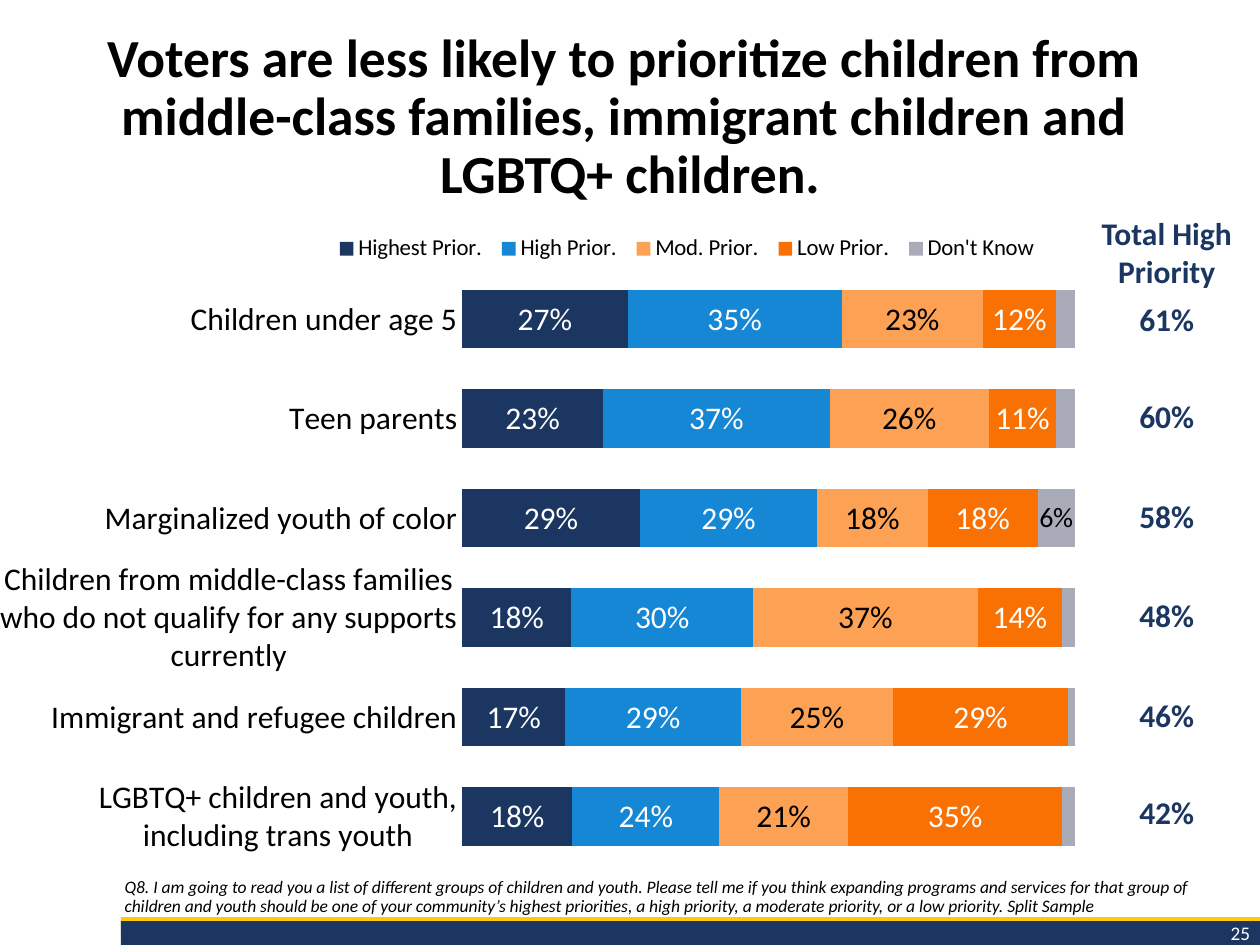
from typing import NamedTuple

from pptx import Presentation
from pptx.chart.data import CategoryChartData
from pptx.dml.color import RGBColor
from pptx.enum.chart import XL_CHART_TYPE as ChartType
from pptx.enum.chart import XL_LABEL_POSITION as LabelPosition
from pptx.enum.chart import XL_LEGEND_POSITION as LegendPosition
from pptx.enum.chart import XL_TICK_MARK as TickMark
from pptx.enum.shapes import MSO_SHAPE as ShapeType
from pptx.enum.text import MSO_ANCHOR as Anchor
from pptx.enum.text import PP_ALIGN as Align
from pptx.oxml import parse_xml
from pptx.oxml.ns import nsdecls, qn
from pptx.util import Inches, Pt

FONT = "Calibri"
BLACK = RGBColor(0x00, 0x00, 0x00)
WHITE = RGBColor(0xFF, 0xFF, 0xFF)
GOLD = RGBColor(0xFC, 0xCA, 0x09)
FOOTER_NAVY = RGBColor(0x1B, 0x36, 0x61)
NAVY = RGBColor(0x1B, 0x36, 0x60)
BLUE = RGBColor(0x15, 0x87, 0xD4)
PEACH = RGBColor(0xFD, 0xA1, 0x55)
ORANGE = RGBColor(0xF9, 0x71, 0x03)
GRAY = RGBColor(0xA9, 0xAB, 0xB8)


class Box(NamedTuple):
    left: float
    top: float
    width: float
    height: float

    def lengths(self):
        return [Inches(value) for value in self]


class Group(NamedTuple):
    name: str
    shares: tuple
    total: str
    row_height: float


class Rating(NamedTuple):
    name: str
    fill: RGBColor
    label: RGBColor


GROUPS = [
    Group("Children under age 5", (0.27, 0.35, 0.23, 0.12, 0.03), "61%", 0.39),
    Group("Teen parents", (0.23, 0.37, 0.26, 0.11, 0.03), "60%", 0.77),
    Group("Marginalized youth of color", (0.29, 0.29, 0.18, 0.18, 0.06), "58%", 0.79),
    Group("Children from middle-class families who do not qualify for any supports currently",
          (0.18, 0.30, 0.37, 0.14, 0.02), "48%", 0.79),
    Group("Immigrant and refugee children", (0.17, 0.29, 0.25, 0.29, 0.01), "46%", 0.79),
    Group("LGBTQ+ children and youth, including trans youth",
          (0.18, 0.24, 0.21, 0.35, 0.02), "42%", 0.77),
]
RATINGS = [
    Rating("Highest Prior.", NAVY, WHITE),
    Rating("High Prior.", BLUE, WHITE),
    Rating("Mod. Prior.", PEACH, BLACK),
    Rating("Low Prior.", ORANGE, WHITE),
    Rating("Don't Know", GRAY, BLACK),
]
SMALLEST_LABEL = 0.05
TITLE = ("Voters are less likely to prioritize children from \v"
         "middle-class families, immigrant children and \vLGBTQ+ children.")
QUESTION = ("Q8. I am going to read you a list of different groups of children and youth. "
            "Please tell me if you think expanding programs and services for that group of "
            "children and youth should be one of your community’s highest priorities, a high "
            "priority, a moderate priority, or a low priority. Split Sample")


def style_font(font, size: float, color: RGBColor, bold=False, italic=False) -> None:
    font.name, font.size, font.bold, font.italic = FONT, Pt(size), bold, italic
    font.color.rgb = color


def add_band(slide, box: Box, color: RGBColor) -> None:
    shape = slide.shapes.add_shape(ShapeType.RECTANGLE, *box.lengths())
    shape.shadow.inherit = False
    shape.fill.solid()
    shape.fill.fore_color.rgb = color
    shape.line.fill.background()


def add_text(slide, box: Box, text: str, size: float, color: RGBColor, align=Align.LEFT,
             anchor=Anchor.TOP, spacing=1.0, bold=False, italic=False) -> None:
    text_frame = slide.shapes.add_textbox(*box.lengths()).text_frame
    text_frame.word_wrap = True
    text_frame.vertical_anchor = anchor
    text_frame.text = text
    paragraph = text_frame.paragraphs[0]
    paragraph.alignment = align
    paragraph.line_spacing = spacing
    for run in paragraph.runs:
        style_font(run.font, size, color, bold, italic)


def set_layout(parent, index: int, box: Box, inner=False) -> None:
    """Place a chart part by fractions of the chart's size."""
    for layout in parent.findall(qn("c:layout")):
        parent.remove(layout)
    target = '<c:layoutTarget val="inner"/>' if inner else ""
    modes = '<c:xMode val="edge"/><c:yMode val="edge"/>'
    sizes = "".join(f'<c:{tag} val="{value}"/>' for tag, value in zip("xywh", box))
    parent.insert(index, parse_xml(
        f'<c:layout {nsdecls("c")}><c:manualLayout>{target}{modes}{sizes}'
        "</c:manualLayout></c:layout>"))


def style_series(series, rating: Rating) -> None:
    series.format.fill.solid()
    series.format.fill.fore_color.rgb = rating.fill
    labels = series.data_labels
    labels.number_format, labels.number_format_is_linked = "0%", False
    labels.position = LabelPosition.CENTER
    style_font(labels.font, 18, rating.label)
    if min(series.values) >= SMALLEST_LABEL:
        labels.show_value = True
        return
    # Narrow bars carry no label
    labels.show_value = False
    for index, value in enumerate(series.values):
        if value >= SMALLEST_LABEL:
            label = series.points[index].data_label
            label.position = LabelPosition.CENTER
            style_font(label.font, 16, rating.label)


def add_priority_chart(slide, box: Box) -> None:
    data = CategoryChartData(number_format="0%")
    data.categories = [group.name for group in GROUPS]
    for index, rating in enumerate(RATINGS):
        data.add_series(rating.name, [group.shares[index] for group in GROUPS])
    chart = slide.shapes.add_chart(ChartType.BAR_STACKED_100, *box.lengths(), data).chart
    chart.has_title = False
    style_font(chart.font, 18, BLACK)

    plot = chart.plots[0]
    plot.gap_width, plot.overlap, plot.vary_by_categories = 70, 100, False
    for series, rating in zip(plot.series, RATINGS):
        style_series(series, rating)

    # Axes
    category_axis, value_axis = chart.category_axis, chart.value_axis
    category_axis.reverse_order = True
    category_axis.major_tick_mark = category_axis.minor_tick_mark = TickMark.NONE
    category_axis.format.line.fill.background()
    style_font(category_axis.tick_labels.font, 18, BLACK)
    value_axis.minimum_scale, value_axis.maximum_scale, value_axis.major_unit = 0, 1, 0.2
    value_axis.has_major_gridlines = False
    value_axis.visible = False

    # Legend and plot position
    chart.has_legend = True
    chart.legend.position = LegendPosition.TOP
    chart.legend.include_in_layout = False
    style_font(chart.legend.font, 13, BLACK)
    set_layout(chart.element.find(".//" + qn("c:legend")), 1, Box(0.3, 0.07, 0.66, 0.06))
    set_layout(chart.element.find(".//" + qn("c:plotArea")), 0,
               Box(0.424, 0.128, 0.562, 0.811), inner=True)


def add_totals_table(slide, box: Box) -> None:
    rows = [("Total High Priority", 0.41)] + [(group.total, group.row_height) for group in GROUPS]
    table = slide.shapes.add_table(len(rows), 1, *box.lengths()).table
    table.first_row = table.horz_banding = False
    for index, (text, height) in enumerate(rows):
        table.rows[index].height = Inches(height)
        cell = table.cell(index, 0)
        cell.fill.background()
        cell.vertical_anchor = Anchor.BOTTOM
        cell.margin_left = cell.margin_right = cell.margin_top = Inches(0.01)
        cell.margin_bottom = 0
        cell.text = text
        paragraph = cell.text_frame.paragraphs[0]
        paragraph.alignment = Align.CENTER
        style_font(paragraph.runs[0].font, 18, NAVY, bold=True)


def main() -> None:
    presentation = Presentation()
    presentation.slide_width, presentation.slide_height = Inches(10), Inches(7.5)
    slide = presentation.slides.add_slide(presentation.slide_layouts[6])

    # Footer bands and page number
    add_band(slide, Box(0.96, 7.28, 9.04, 0.16), GOLD)
    add_band(slide, Box(0.96, 7.31, 9.04, 0.19), FOOTER_NAVY)
    add_text(slide, Box(8.54, 7.26, 1.48, 0.29), "25", 11, WHITE, Align.RIGHT)

    # Title and survey question
    add_text(slide, Box(0, 0.2, 10, 1.22), TITLE, 30.6, BLACK, Align.CENTER,
             spacing=0.9, bold=True)
    add_text(slide, Box(0.89, 6.78, 9.09, 0.54), QUESTION, 10, BLACK,
             anchor=Anchor.BOTTOM, spacing=0.9, italic=True)

    # Ratings and their totals
    add_priority_chart(slide, Box(0, 1.39, 8.65, 5.84))
    add_totals_table(slide, Box(8.65, 1.7, 1.22, 4.9))
    presentation.save("out.pptx")


if __name__ == "__main__":
    main()
